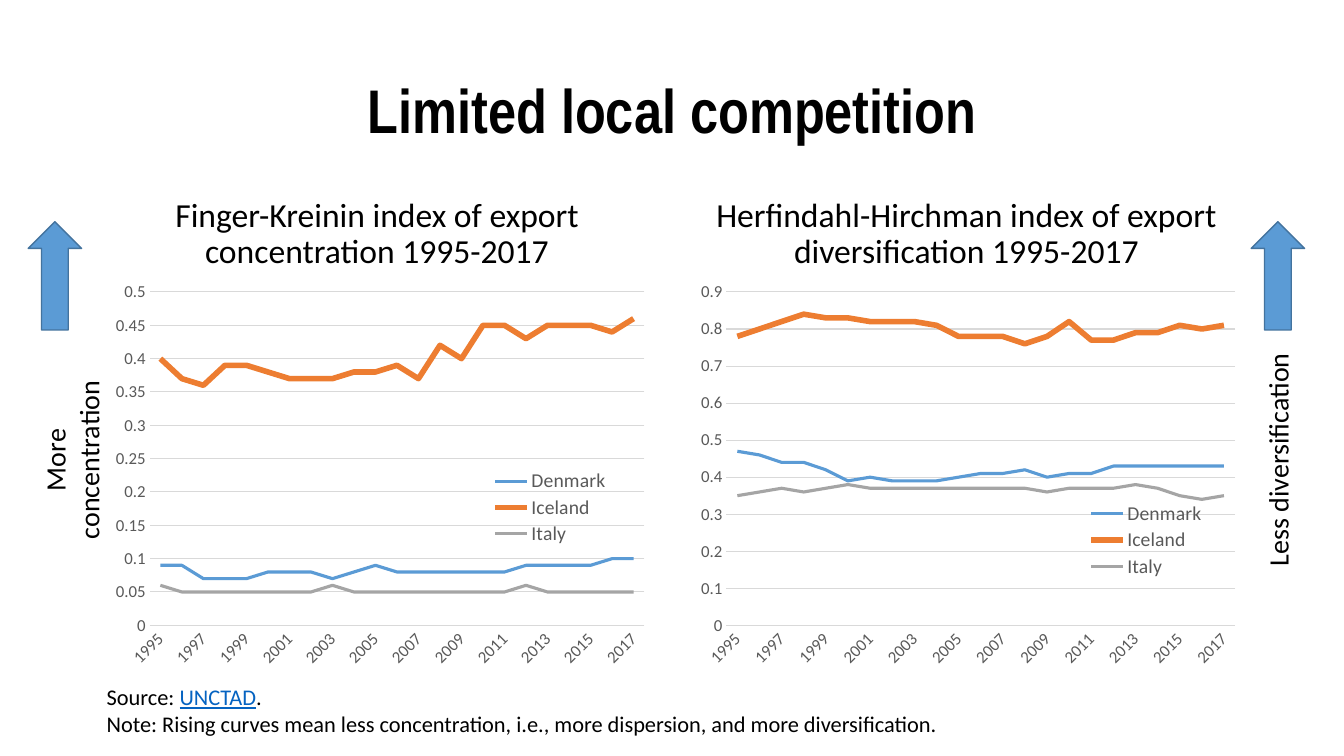
import collections

import lxml.etree
import pptx
import pptx.chart.data
import pptx.dml.color
import pptx.enum.chart
import pptx.enum.shapes
import pptx.enum.text
import pptx.oxml
import pptx.oxml.ns
import pptx.util

Box = collections.namedtuple("Box", "left top width height")
Theme = collections.namedtuple(
    "Theme", "ink muted grid link arrow arrow_edge title_font body_font title heading label note legend axis")
Country = collections.namedtuple("Country", "name color weight")
Index = collections.namedtuple("Index", "heading trend maximum step plot legend values")

THEME = Theme(
    ink="000000", muted="595959", grid="D9D9D9", link="0563C1", arrow="5B9BD5", arrow_edge="43739E",
    title_font="Arial Narrow", body_font="Calibri",
    title=44, heading=24, label=20, note=16, legend=14, axis=12)
COUNTRIES = [Country("Denmark", "5B9BD5", 2.25), Country("Iceland", "ED7D31", 4), Country("Italy", "A5A5A5", 2.25)]
YEARS = [str(year) for year in range(1995, 2018)]

CONCENTRATION = Index(
    "Finger-Kreinin index of export concentration 1995-2017", "More concentration", 0.5, 0.05,
    Box(0.1, 0.04, 0.87, 0.82), Box(0.66, 0.47, 0.29, 0.2),
    [[0.09, 0.09, 0.07, 0.07, 0.07, 0.08, 0.08, 0.08, 0.07, 0.08, 0.09, 0.08,
      0.08, 0.08, 0.08, 0.08, 0.08, 0.09, 0.09, 0.09, 0.09, 0.1, 0.1],
     [0.4, 0.37, 0.36, 0.39, 0.39, 0.38, 0.37, 0.37, 0.37, 0.38, 0.38, 0.39,
      0.37, 0.42, 0.4, 0.45, 0.45, 0.43, 0.45, 0.45, 0.45, 0.44, 0.46],
     [0.06, 0.05, 0.05, 0.05, 0.05, 0.05, 0.05, 0.05, 0.06, 0.05, 0.05, 0.05,
      0.05, 0.05, 0.05, 0.05, 0.05, 0.06, 0.05, 0.05, 0.05, 0.05, 0.05]])
DIVERSIFICATION = Index(
    "Herfindahl-Hirchman index of export diversification 1995-2017", "Less diversification", 0.9, 0.1,
    Box(0.08, 0.04, 0.89, 0.82), Box(0.67, 0.55, 0.29, 0.2),
    [[0.47, 0.46, 0.44, 0.44, 0.42, 0.39, 0.4, 0.39, 0.39, 0.39, 0.4, 0.41,
      0.41, 0.42, 0.4, 0.41, 0.41, 0.43, 0.43, 0.43, 0.43, 0.43, 0.43],
     [0.78, 0.8, 0.82, 0.84, 0.83, 0.83, 0.82, 0.82, 0.82, 0.81, 0.78, 0.78,
      0.78, 0.76, 0.78, 0.82, 0.77, 0.77, 0.79, 0.79, 0.81, 0.8, 0.81],
     [0.35, 0.36, 0.37, 0.36, 0.37, 0.38, 0.37, 0.37, 0.37, 0.37, 0.37, 0.37,
      0.37, 0.37, 0.36, 0.37, 0.37, 0.37, 0.38, 0.37, 0.35, 0.34, 0.35]])


def share(box, left, top, width, height):
    """Return the part of a box given by shares of its size."""
    return Box(box.left + left * box.width, box.top + top * box.height, width * box.width, height * box.height)


def inches(box):
    """Return the four lengths of a box in slide units."""
    return [pptx.util.Inches(length) for length in box]


def rgb(code):
    """Return a colour from its hexadecimal code."""
    return pptx.dml.color.RGBColor.from_string(code)


def assign(target, values):
    """Set each named attribute of the target."""
    for name, value in values.items():
        setattr(target, name, value)


def style_font(font, size, color=THEME.ink, face=THEME.body_font, **extras):
    """Set size, colour, face and further values of a font."""
    assign(font, {"size": pptx.util.Pt(size), "name": face, **extras})
    font.color.rgb = rgb(color)


def style_line(line, color, weight):
    """Set the colour and weight of a line."""
    line.color.rgb = rgb(color)
    line.width = pptx.util.Pt(weight)


def add_text(slide, box, paragraphs, anchor, paragraph_format, wrap=True):
    """Add a text box whose paragraphs are lists of text and font values."""
    holder = slide.shapes.add_textbox(*inches(box))
    assign(holder.text_frame, {"word_wrap": wrap, "vertical_anchor": anchor})
    for number, runs in enumerate(paragraphs):
        paragraph = holder.text_frame.add_paragraph() if number else holder.text_frame.paragraphs[0]
        assign(paragraph, paragraph_format)
        for wording, font_values in runs:
            run = paragraph.add_run()
            run.text = wording
            style_font(run.font, **font_values)
    return holder


def set_layout(part, box, inner=False):
    """Fix the place of a plot area or legend by shares of its chart."""
    qn = pptx.oxml.ns.qn
    for old in part.findall(qn("c:layout")):
        part.remove(old)
    layout = pptx.oxml.parse_xml(f"<c:layout {pptx.oxml.ns.nsdecls('c')}><c:manualLayout/></c:layout>")
    settings = {"layoutTarget": "inner"} if inner else {}
    settings.update(xMode="edge", yMode="edge", x=box.left, y=box.top, w=box.width, h=box.height)
    for name, value in settings.items():
        lxml.etree.SubElement(layout[0], qn(f"c:{name}")).set("val", str(value))
    if inner:
        part.insert(0, layout)
    else:
        part.find(qn("c:legendPos")).addnext(layout)


def style_axes(chart, index):
    """Style both axes, their labels and the gridlines."""
    years, scale = chart.category_axis, chart.value_axis
    tick = pptx.enum.chart.XL_TICK_MARK.NONE
    for axis in (years, scale):
        assign(axis, {"major_tick_mark": tick, "minor_tick_mark": tick})
        style_font(axis.tick_labels.font, THEME.axis, THEME.muted)
    style_line(years.format.line, THEME.grid, 0.75)
    qn = pptx.oxml.ns.qn
    years._element.find(qn("c:txPr")).find(qn("a:bodyPr")).set("rot", "-2700000")
    skip = pptx.oxml.parse_xml(f"<c:tickLblSkip {pptx.oxml.ns.nsdecls('c')} val='2'/>")
    years._element.find(qn("c:noMultiLvlLbl")).addprevious(skip)
    assign(scale, {"minimum_scale": 0, "maximum_scale": index.maximum, "major_unit": index.step,
                   "has_major_gridlines": True})
    assign(scale.tick_labels, {"number_format": "General", "number_format_is_linked": False})
    scale.format.line.fill.background()
    style_line(scale.major_gridlines.format.line, THEME.grid, 0.75)


def add_index_chart(slide, box, index):
    """Add the line chart of one index for all countries."""
    table = pptx.chart.data.CategoryChartData()
    table.categories = YEARS
    for country, values in zip(COUNTRIES, index.values):
        table.add_series(country.name, values)
    chart = slide.shapes.add_chart(pptx.enum.chart.XL_CHART_TYPE.LINE, *inches(box), table).chart
    assign(chart, {"has_title": False, "has_legend": True})
    style_font(chart.font, 10)
    chart.plots[0].vary_by_categories = False
    for country, series in zip(COUNTRIES, chart.plots[0].series):
        series.smooth = False
        style_line(series.format.line, country.color, country.weight)
    style_axes(chart, index)
    assign(chart.legend, {"position": pptx.enum.chart.XL_LEGEND_POSITION.BOTTOM, "include_in_layout": True})
    style_font(chart.legend.font, THEME.legend, THEME.muted)
    set_layout(chart.legend._element, index.legend)
    set_layout(chart._chartSpace.chart.plotArea, index.plot, inner=True)


def add_panel(slide, box, index):
    """Add the heading and the chart of one index."""
    add_text(slide, share(box, 0, 0, 1, 0.18), [[(index.heading, {"size": THEME.heading})]],
             pptx.enum.text.MSO_ANCHOR.BOTTOM,
             {"alignment": pptx.enum.text.PP_ALIGN.CENTER, "line_spacing": 0.9, "space_before": pptx.util.Pt(10)})
    add_index_chart(slide, share(box, 0, 0.18, 1, 0.82), index)


def add_trend(slide, box, wording):
    """Add an upward arrow with its sideways label below."""
    arrow = slide.shapes.add_shape(pptx.enum.shapes.MSO_SHAPE.UP_ARROW, *inches(share(box, 0, 0, 1, 0.3)))
    arrow.shadow.inherit = False
    arrow.fill.solid()
    arrow.fill.fore_color.rgb = rgb(THEME.arrow)
    style_line(arrow.line, THEME.arrow_edge, 1)
    length, depth = 2.4, 0.44
    middle = share(box, 0.5, 0.66, 0, 0)
    label = add_text(slide, Box(middle.left - length / 2, middle.top - depth / 2, length, depth),
                     [[(wording, {"size": THEME.label})]], pptx.enum.text.MSO_ANCHOR.TOP,
                     {"alignment": pptx.enum.text.PP_ALIGN.CENTER}, wrap=False)
    label.rotation = 270


def add_title(slide, box):
    """Add the slide title."""
    add_text(slide, box,
             [[("Limited local competition", {"size": THEME.title, "face": THEME.title_font, "bold": True})]],
             pptx.enum.text.MSO_ANCHOR.MIDDLE,
             {"alignment": pptx.enum.text.PP_ALIGN.CENTER, "line_spacing": 0.9})


def add_source_note(slide, box):
    """Add the source and the reading note."""
    plain = {"size": THEME.note}
    source = [("Source: ", plain), ("UNCTAD", {**plain, "color": THEME.link, "underline": True}), (".", plain)]
    note = [("Note: Rising curves mean less concentration, i.e., more dispersion, and more diversification.", plain)]
    add_text(slide, box, [source, note], pptx.enum.text.MSO_ANCHOR.TOP, {})


def main():
    """Build and save the slide."""
    deck = pptx.Presentation()
    assign(deck, {"slide_width": pptx.util.Inches(13.33), "slide_height": pptx.util.Inches(7.5)})
    slide = deck.slides.add_slide(deck.slide_layouts[6])
    add_title(slide, Box(0.2, 0.4, 12.94, 1.45))
    for index, left, width, trend_left in ((CONCENTRATION, 0.92, 5.64, 0.28), (DIVERSIFICATION, 6.75, 5.67, 12.41)):
        add_panel(slide, Box(left, 1.85, width, 4.92), index)
        add_trend(slide, Box(trend_left, 2.2, 0.53, 3.58), index.trend)
    add_source_note(slide, Box(0.96, 6.73, 11.57, 0.64))
    deck.save("out.pptx")


if __name__ == "__main__":
    main()
